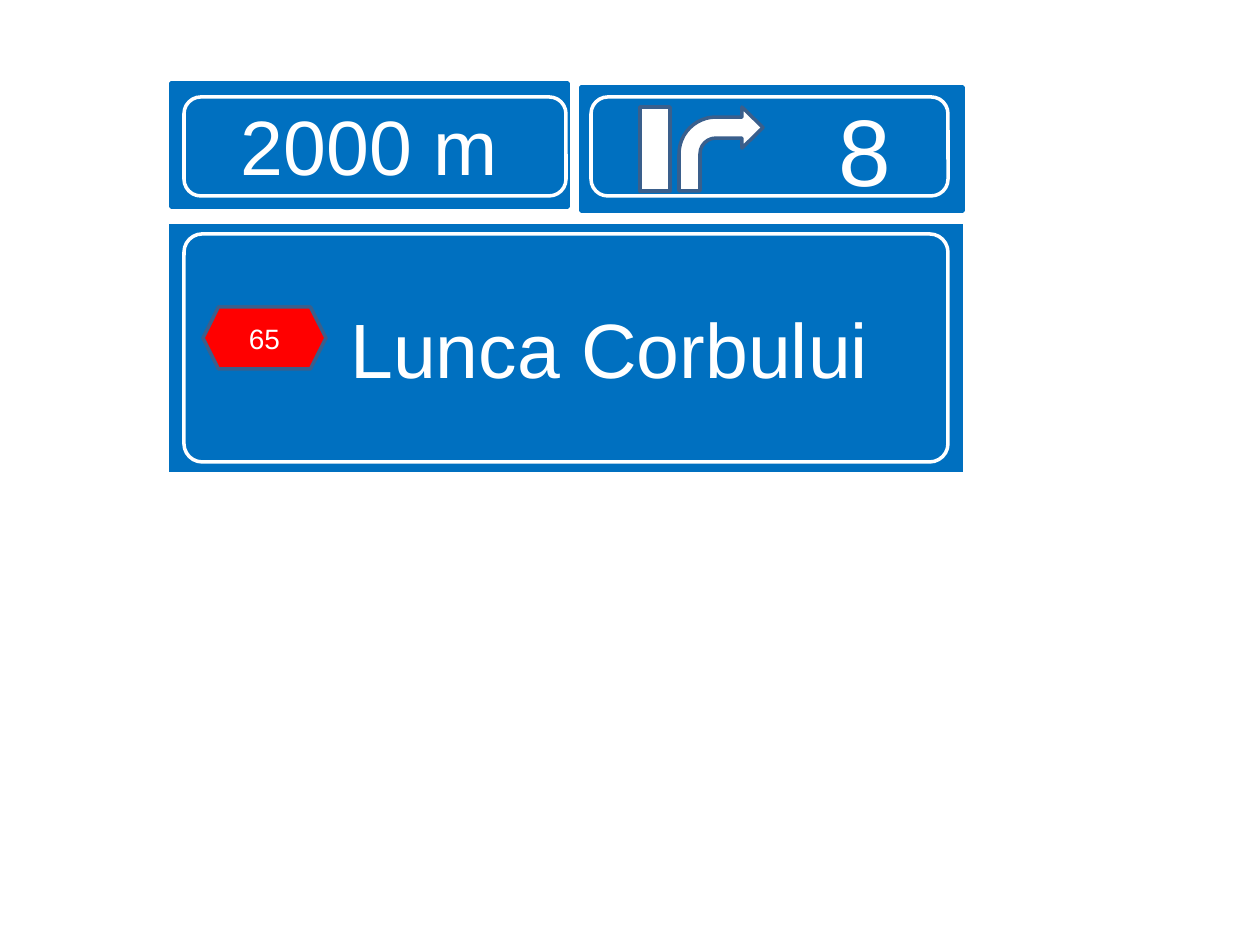
from pptx import Presentation
from pptx.dml.color import RGBColor
from pptx.enum.shapes import MSO_SHAPE as Shape
from pptx.enum.text import MSO_ANCHOR as Anchor, MSO_AUTO_SIZE as AutoSize, PP_ALIGN as Align
from pptx.util import Emu, Pt

SIGN_BLUE = RGBColor(0x00, 0x70, 0xC0)
EDGE_BLUE = RGBColor(0x3A, 0x5F, 0x8C)
ROAD_RED = RGBColor(0xFF, 0x00, 0x00)
WHITE = RGBColor(0xFF, 0xFF, 0xFF)

DESTINATION = ("Lunca Corbului", (169, 224, 794, 248))
PANELS = [
    ("2000 m", (171, 83, 397, 124), 44, 13),
    ("8", (581, 87, 382, 124), 54, 198),
]
SYMBOLS = [
    (Shape.RECTANGLE, (640, 107, 30, 84), []),
    (Shape.BENT_ARROW, (679, 107, 84, 84), [0.25, 0.245, 0.25, 0.438]),
]
ROAD_NUMBER = ("65", (203, 307, 123, 62))
BORDERS = [
    ((184, 97, 382, 99), 0.17),
    ((591, 97, 357, 99), 0.17),
    ((184, 234, 764, 228), 0.08),
]


def px(length):
    return Emu(round(length * 914400 / 126))


def write(shape, text, size, left=13, right=13):
    frame = shape.text_frame
    frame.word_wrap = True
    frame.auto_size = AutoSize.NONE
    frame.vertical_anchor = Anchor.MIDDLE
    frame.margin_left, frame.margin_right = px(left), px(right)
    frame.margin_top = frame.margin_bottom = px(6)
    frame.text = text
    paragraph = frame.paragraphs[0]
    paragraph.alignment = Align.CENTER
    font = paragraph.runs[0].font
    font.name, font.size, font.color.rgb = "Arial", Pt(size), WHITE


def draw(kind, box, line, fill=None, adjustments=()):
    shape = slide.shapes.add_shape(kind, *map(px, box))
    shape.shadow.inherit = False
    if fill is None:
        shape.fill.background()
    else:
        shape.fill.solid()
        shape.fill.fore_color.rgb = fill
    shape.line.color.rgb = line
    shape.line.width = Pt(2)
    for index, value in enumerate(adjustments):
        shape.adjustments[index] = value
    return shape


deck = Presentation()
deck.slide_width, deck.slide_height = px(1260), px(945)
slide = deck.slides.add_slide(deck.slide_layouts[5])

town, town_box = DESTINATION
title = slide.shapes.title
title.left, title.top, title.width, title.height = map(px, town_box)
title.fill.solid()
title.fill.fore_color.rgb = SIGN_BLUE
write(title, town, 44, left=100)

for text, box, size, left in PANELS:
    panel = draw(Shape.ROUNDED_RECTANGLE, box, SIGN_BLUE, SIGN_BLUE, [0])
    write(panel, text, size, left=left)

for kind, box, adjustments in SYMBOLS:
    draw(kind, box, EDGE_BLUE, WHITE, adjustments)

number, badge_box = ROAD_NUMBER
write(draw(Shape.HEXAGON, badge_box, EDGE_BLUE, ROAD_RED), number, 16)

for box, radius in BORDERS:
    draw(Shape.ROUNDED_RECTANGLE, box, WHITE, adjustments=[radius])

deck.save("out.pptx")
